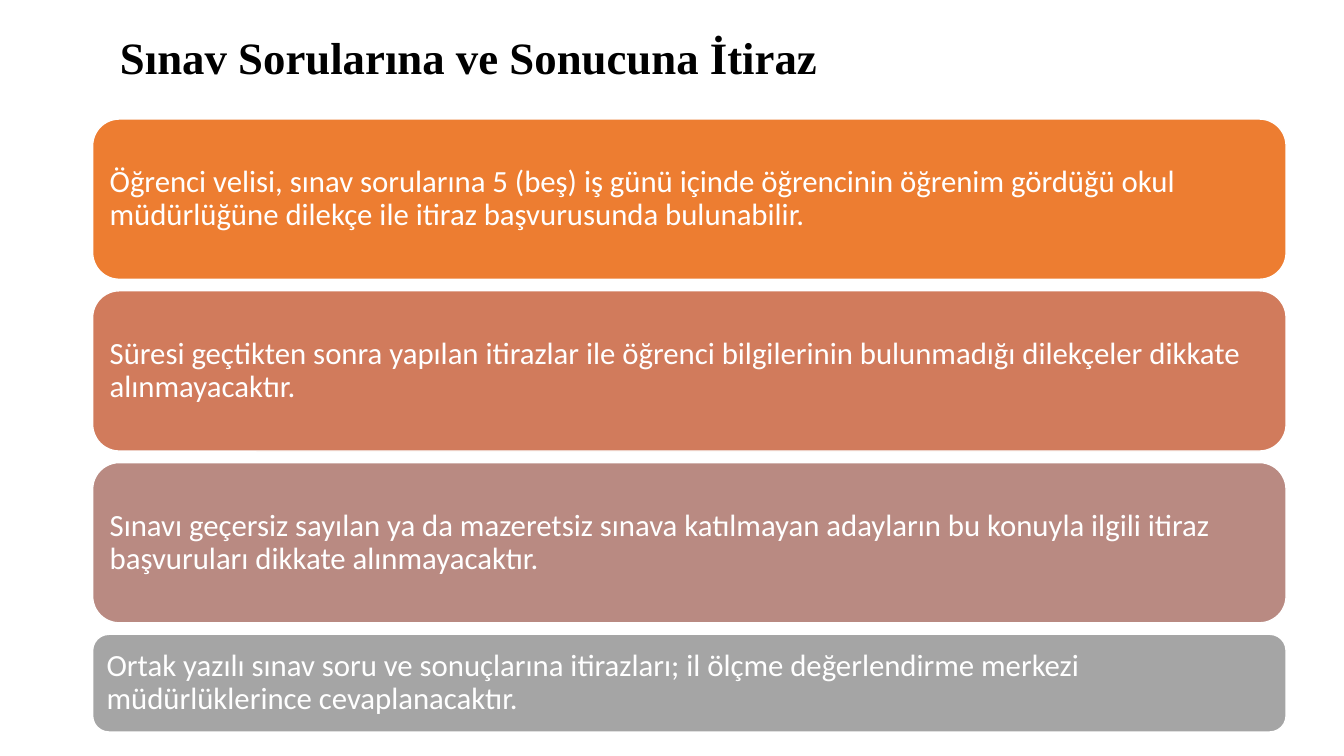
from pptx import Presentation
from pptx.dml.color import RGBColor
from pptx.enum.shapes import MSO_SHAPE
from pptx.enum.text import MSO_ANCHOR, MSO_AUTO_SIZE, PP_ALIGN
from pptx.util import Pt

BLACK = RGBColor(0x00, 0x00, 0x00)
WHITE = RGBColor(0xFF, 0xFF, 0xFF)
ORANGE = RGBColor(0xED, 0x7D, 0x31)
TERRACOTTA = RGBColor(0xD1, 0x7B, 0x5C)
ROSE = RGBColor(0xB9, 0x8A, 0x82)
GREY = RGBColor(0xA5, 0xA5, 0xA5)

TITLE = "Sınav Sorularına ve Sonucuna İtiraz"
TALL, SHORT = 114.5, 69.8
RULES = [
    ("Öğrenci velisi, sınav sorularına 5 (beş) iş günü içinde öğrencinin öğrenim "
     "gördüğü okul müdürlüğüne dilekçe ile itiraz başvurusunda bulunabilir.", ORANGE, TALL),
    ("Süresi geçtikten sonra yapılan itirazlar ile öğrenci bilgilerinin bulunmadığı "
     "dilekçeler dikkate alınmayacaktır.", TERRACOTTA, TALL),
    ("Sınavı geçersiz sayılan ya da mazeretsiz sınava katılmayan adayların bu konuyla "
     "ilgili itiraz başvuruları dikkate alınmayacaktır.", ROSE, TALL),
    ("Ortak yazılı sınav soru ve sonuçlarına itirazları; il ölçme değerlendirme merkezi "
     "müdürlüklerince cevaplanacaktır.", GREY, SHORT),
]
LEFT, TOP, WIDTH, GAP = 66.2, 85, 852.5, 8.2
INSET = 6.6


def set_text(sp, text, *, font, size, color, bold=False, anchor=MSO_ANCHOR.MIDDLE):
    tf = sp.text_frame
    tf.word_wrap = True
    tf.auto_size = MSO_AUTO_SIZE.NONE
    tf.vertical_anchor = anchor
    p = tf.paragraphs[0]
    p.alignment = PP_ALIGN.LEFT
    p.line_spacing = 0.9
    r = p.add_run()
    r.text = text
    r.font.name = font
    r.font.size = Pt(size)
    r.font.bold = bold
    r.font.color.rgb = color
    return tf


def add_rule_box(s, top, height, text, fill):
    sp = s.shapes.add_shape(MSO_SHAPE.ROUNDED_RECTANGLE,
                            Pt(LEFT), Pt(top), Pt(WIDTH), Pt(height))
    sp.shadow.inherit = False
    sp.fill.solid()
    sp.fill.fore_color.rgb = fill
    sp.line.color.rgb = WHITE
    sp.line.width = Pt(1)
    tf = set_text(sp, text, font="Calibri", size=22, color=WHITE)
    tf.margin_left = tf.margin_right = tf.margin_top = tf.margin_bottom = Pt(INSET)


def main():
    prs = Presentation()
    prs.slide_width, prs.slide_height = Pt(960), Pt(540)
    s = prs.slides.add_slide(prs.slide_layouts[5])

    title = s.shapes.title
    title.left, title.top = Pt(78.5), Pt(8.6)
    title.width, title.height = Pt(713.5), Pt(55.4)
    set_text(title, TITLE, font="Times New Roman", size=32, color=BLACK,
             bold=True, anchor=MSO_ANCHOR.BOTTOM)

    top = TOP
    for text, fill, height in RULES:
        add_rule_box(s, top, height, text, fill)
        top += height + GAP

    prs.save("out.pptx")


if __name__ == "__main__":
    main()
